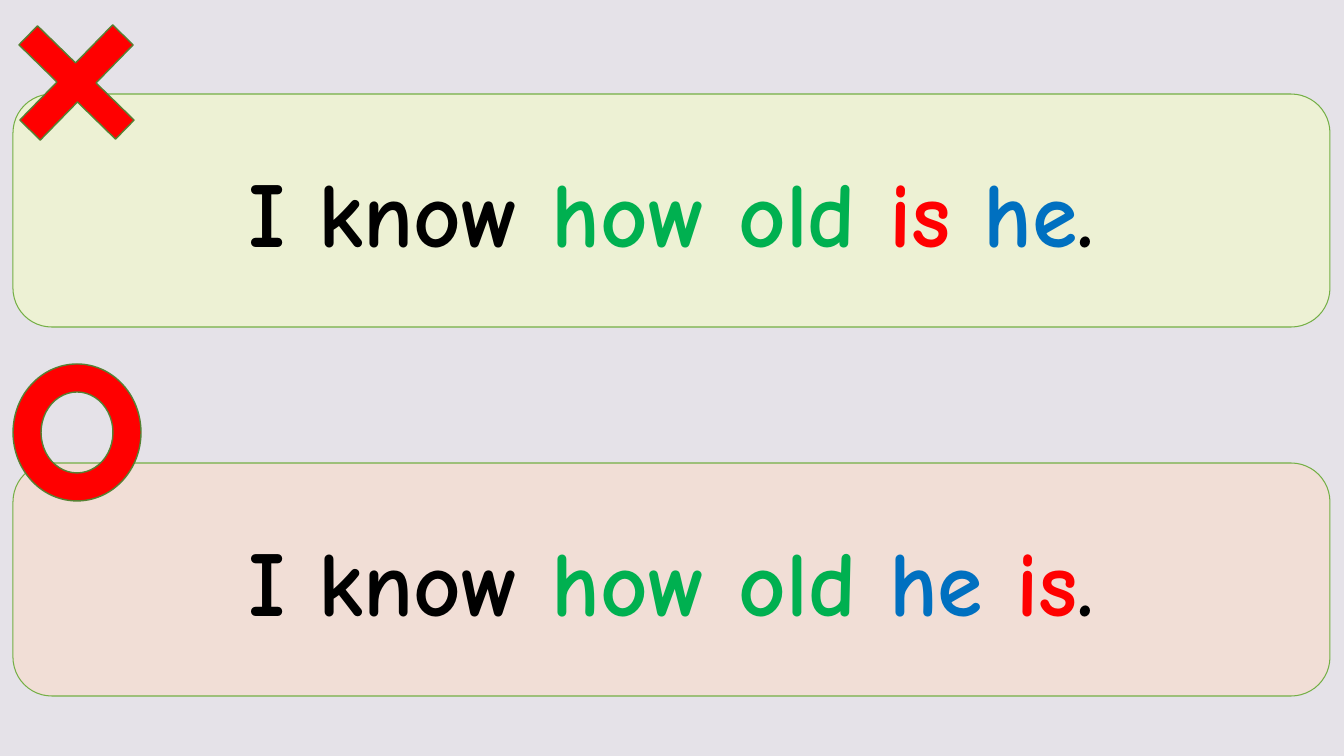
from pptx import Presentation
from pptx.dml.color import RGBColor
from pptx.enum.shapes import MSO_SHAPE
from pptx.enum.text import MSO_ANCHOR, PP_ALIGN
from pptx.util import Pt

PX = 12192000 / 1344
FONT = "Comic Neue"
COLORS = {
    "back": "E5E2E8", "wrong": "EDF1D4", "right": "F1DED6",
    "edge": "74AF45", "mark": "FF0000", "rim": "568133",
    "main": "000000", "ask": "00B050", "verb": "FF0000", "noun": "0070C0",
}


def px(count):
    """Turn pixels into EMU."""
    return round(count * PX)


def color(name):
    """Look up a named colour."""
    return RGBColor.from_string(COLORS[name])


def draw(slide, kind, box, fill, line, width):
    """Add a flat filled shape in the given box."""
    shape = slide.shapes.add_shape(kind, *map(px, box))
    shape.shadow.inherit = False
    shape.fill.solid()
    shape.fill.fore_color.rgb = color(fill)
    shape.line.color.rgb = color(line)
    shape.line.width = Pt(width)
    return shape


def add_card(slide, box, fill, words):
    """Add a rounded card with a sentence of coloured words."""
    card = draw(slide, MSO_SHAPE.FLOWCHART_ALTERNATE_PROCESS, box,
                fill, "edge", 0.75)
    frame = card.text_frame
    frame.word_wrap = True
    frame.vertical_anchor = MSO_ANCHOR.MIDDLE
    line = frame.paragraphs[0]
    line.alignment = PP_ALIGN.CENTER
    for text, role in words:
        run = line.add_run()
        run.text = text
        run.font.name = FONT
        run.font.size = Pt(66)
        run.font.bold = True
        run.font.color.rgb = color(role)


def add_mark(slide, kind, box, adjust, turn=0):
    """Add a red mark over the corner of a card."""
    mark = draw(slide, kind, box, "mark", "rim", 1)
    mark.adjustments[0] = adjust
    mark.rotation = turn


def add_pair(slide, box):
    """Place the wrong sentence above the right one, each with its mark."""
    left, top, width, height = box
    step = 369
    start = [("I know ", "main"), ("how old ", "ask")]
    stop = [(".", "main")]
    add_card(slide, box, "wrong",
             start + [("is ", "verb"), ("he", "noun")] + stop)
    add_mark(slide, MSO_SHAPE.CROSS, (left - 4, top - 78, 135, 133), 0.4, 44.3)
    add_card(slide, (left, top + step, width, height), "right",
             start + [("he ", "noun"), ("is", "verb")] + stop)
    add_mark(slide, MSO_SHAPE.DONUT,
             (left, top + step - 99, 128, 137), 0.219)


def main():
    """Build and save the slide."""
    deck = Presentation()
    deck.slide_width, deck.slide_height = px(1344), px(756)
    slide = deck.slides.add_slide(deck.slide_layouts[6])
    slide.background.fill.solid()
    slide.background.fill.fore_color.rgb = color("back")
    add_pair(slide, (13, 94, 1317, 233))
    deck.save("out.pptx")


if __name__ == "__main__":
    main()
